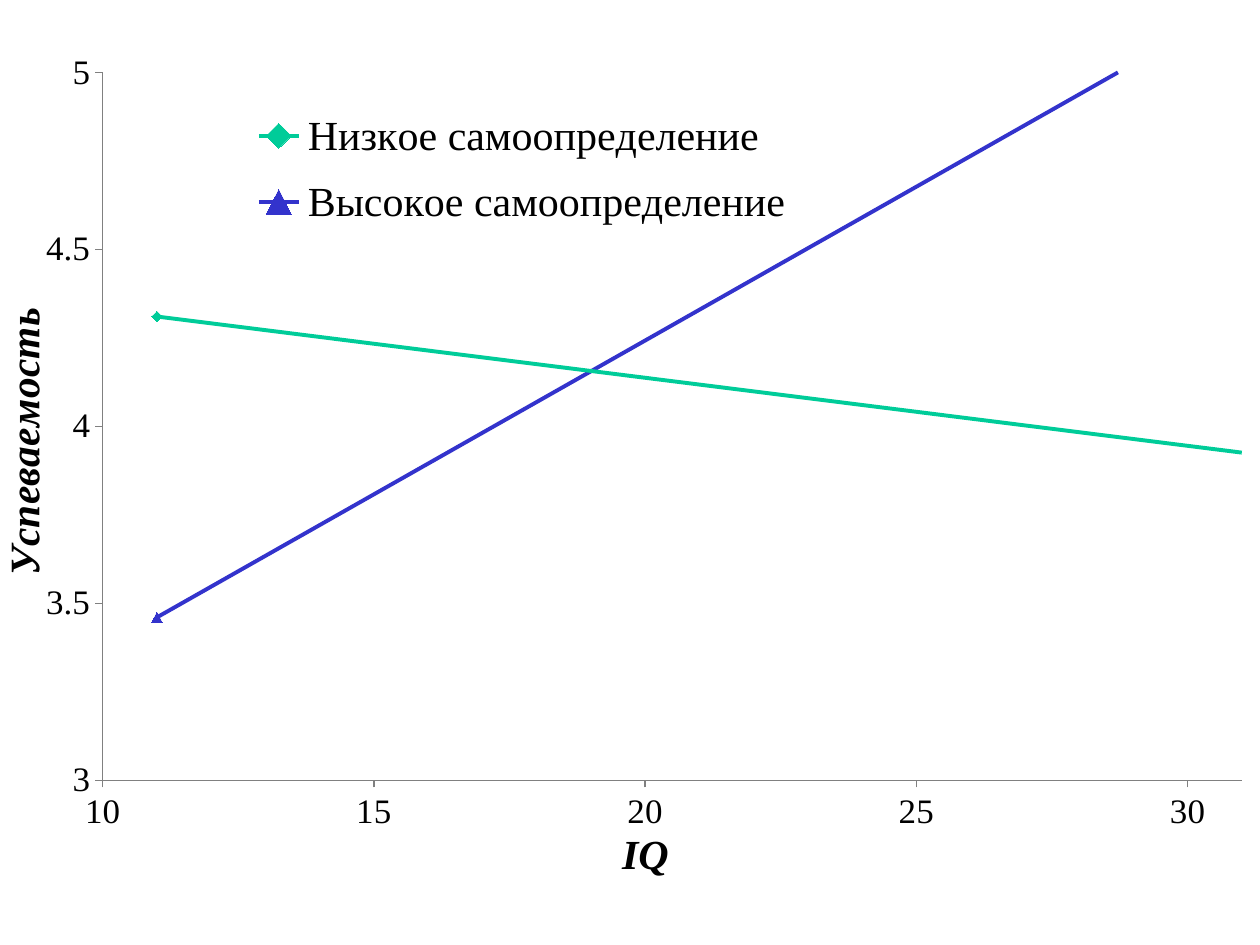
from dataclasses import dataclass

from lxml.etree import SubElement
from pptx import Presentation
from pptx.chart.data import XyChartData
from pptx.dml.color import RGBColor
from pptx.enum.chart import XL_CHART_TYPE as ChartType
from pptx.enum.chart import XL_LEGEND_POSITION as LegendPosition
from pptx.enum.chart import XL_MARKER_STYLE as Marker
from pptx.enum.chart import XL_TICK_MARK as TickMark
from pptx.oxml.ns import qn
from pptx.util import Cm, Pt


@dataclass(frozen=True)
class Theme:
    font: str = "Times New Roman"
    ink: str = "000000"
    axis: str = "808080"
    low: str = "00CC99"
    high: str = "3333CC"
    base_size: int = 10
    tick_size: int = 20
    label_size: int = 24
    line_width: float = 2.25
    marker_size: int = 6


THEME = Theme()
IQ_RANGE = (11, 37)
GROUPS = (
    ("Низкое самоопределение", (4.31, 3.81), THEME.low, Marker.DIAMOND),
    ("Высокое самоопределение", (3.46, 5.72), THEME.high, Marker.TRIANGLE),
)


def style_font(font, size, strong=False):
    font.name = THEME.font
    font.size = Pt(size)
    font.bold = font.italic = strong
    font.color.rgb = RGBColor.from_string(THEME.ink)


def place(element, position, **percents):
    for old in element.findall(qn("c:layout")):
        element.remove(old)
    layout = element.makeelement(qn("c:layout"))
    manual = SubElement(layout, qn("c:manualLayout"))
    if element.tag == qn("c:plotArea"):
        SubElement(manual, qn("c:layoutTarget")).set("val", "inner")
    for side in ("x", "y"):
        SubElement(manual, qn(f"c:{side}Mode")).set("val", "edge")
    for name, percent in percents.items():
        SubElement(manual, qn(f"c:{name}")).set("val", str(round(percent / 100, 4)))
    element.insert(position, layout)


def format_axis(axis, title, low, high, step):
    axis.minimum_scale, axis.maximum_scale, axis.major_unit = low, high, step
    axis.has_major_gridlines = axis.has_minor_gridlines = False
    axis.major_tick_mark, axis.minor_tick_mark = TickMark.OUTSIDE, TickMark.NONE
    axis.format.line.color.rgb = RGBColor.from_string(THEME.axis)
    axis.format.line.width = Pt(0.75)
    axis.tick_labels.number_format = "General"
    axis.tick_labels.number_format_is_linked = False
    style_font(axis.tick_labels.font, THEME.tick_size)
    axis.has_title = True
    span = axis.axis_title.text_frame.paragraphs[0].add_run()
    span.text = title
    style_font(span.font, THEME.label_size, strong=True)
    return axis.axis_title.element


def format_series(series, color, marker):
    shade = RGBColor.from_string(color)
    series.smooth = False
    series.format.line.color.rgb = shade
    series.format.line.width = Pt(THEME.line_width)
    series.marker.style = marker
    series.marker.size = THEME.marker_size
    for fill in (series.marker.format.fill, series.marker.format.line.fill):
        fill.solid()
        fill.fore_color.rgb = shade


def add_legend(chart):
    chart.has_legend = True
    chart.legend.position = LegendPosition.RIGHT
    chart.legend.include_in_layout = False
    style_font(chart.legend.font, THEME.label_size)
    legend = chart.element.find(".//" + qn("c:legend"))
    place(legend, 1, x=19.6, y=4.6, w=44, h=18.5)


def add_scatter(page):
    data = XyChartData()
    for name, scores, _, _ in GROUPS:
        series = data.add_series(name)
        for iq, score in zip(IQ_RANGE, scores):
            series.add_data_point(iq, score)
    chart = page.shapes.add_chart(
        ChartType.XY_SCATTER_LINES, Cm(-0.23), Cm(1.07), Cm(25.86), Cm(16.89), data
    ).chart
    chart.has_title = False
    style_font(chart.font, THEME.base_size)
    chart.plots[0].vary_by_categories = False
    for series, (_, _, color, marker) in zip(chart.plots[0].series, GROUPS):
        format_series(series, color, marker)
    iq_title = format_axis(chart.category_axis, "IQ", 10, 31, 5)
    score_title = format_axis(chart.value_axis, "Успеваемость", 3, 5, 0.5)
    score_title.find(".//" + qn("a:bodyPr")).set("rot", "-5400000")
    place(iq_title, 1, x=48.8, y=93)
    place(score_title, 1, x=0, y=30.4)
    plot_area = chart.element.find(".//" + qn("c:plotArea"))
    place(plot_area, 0, x=8.9, y=2.1, w=88.8, h=86.1)
    add_legend(chart)


def main():
    deck = Presentation()
    deck.slide_width, deck.slide_height = Cm(25.4), Cm(19.05)
    page = deck.slides.add_slide(deck.slide_layouts[6])
    add_scatter(page)
    deck.save("out.pptx")


if __name__ == "__main__":
    main()
